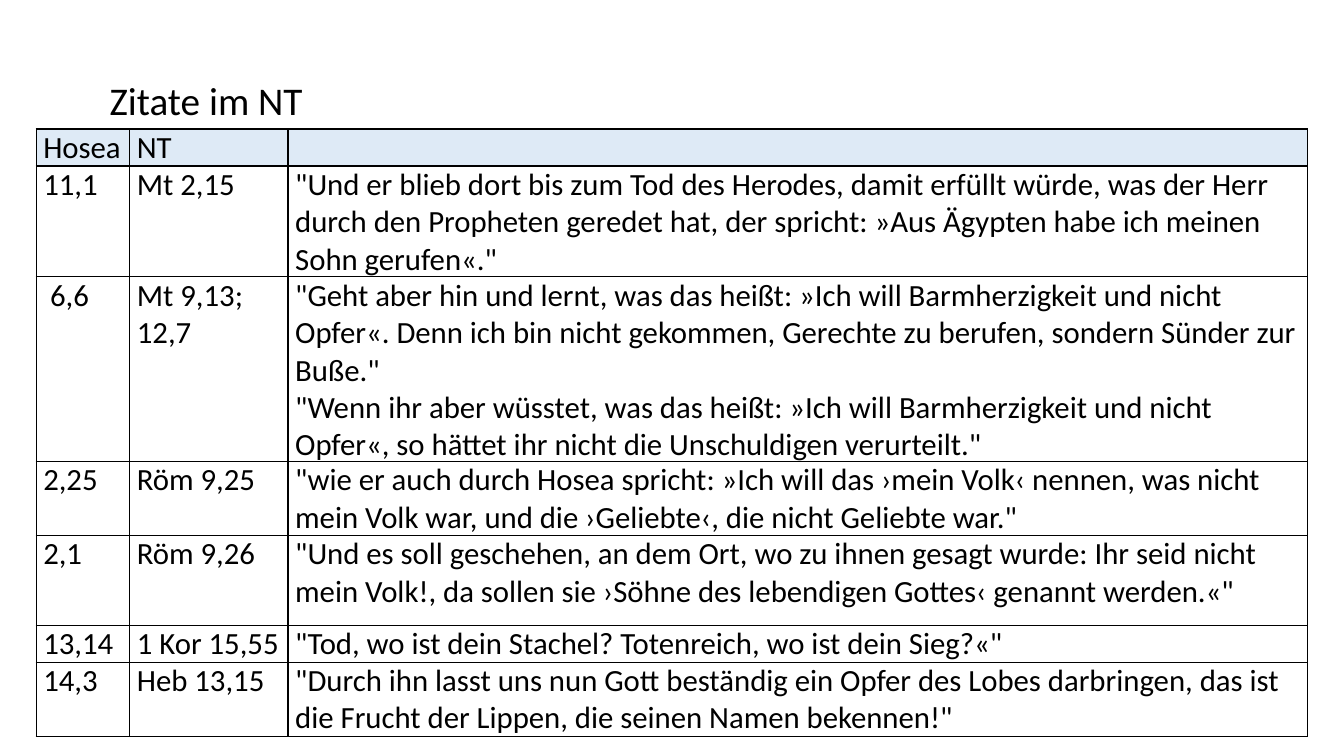
"""Build a slide with a table of the Hosea quotations in the New Testament."""
from pptx import Presentation
from pptx.dml.color import RGBColor
from pptx.enum.text import MSO_ANCHOR, MSO_AUTO_SIZE, PP_ALIGN
from pptx.oxml import parse_xml
from pptx.oxml.ns import nsdecls
from pptx.util import Cm, Pt

TITLE = "Zitate im NT"
ROWS = [
    ("Hosea", "NT", ""),
    ("11,1", "Mt 2,15",
     '"Und er blieb dort bis zum Tod des Herodes, damit erfüllt würde, was der Herr '
     'durch den Propheten geredet hat, der spricht: »Aus Ägypten habe ich meinen '
     'Sohn gerufen«."'),
    (" 6,6", "Mt 9,13; 12,7",
     '"Geht aber hin und lernt, was das heißt: »Ich will Barmherzigkeit und nicht '
     'Opfer«. Denn ich bin nicht gekommen, Gerechte zu berufen, sondern Sünder zur '
     'Buße."\n'
     '"Wenn ihr aber wüsstet, was das heißt: »Ich will Barmherzigkeit und nicht '
     'Opfer«, so hättet ihr nicht die Unschuldigen verurteilt."'),
    ("2,25", "Röm 9,25",
     '"wie er auch durch Hosea spricht: »Ich will das ›mein Volk‹ nennen, was nicht '
     'mein Volk war, und die ›Geliebte‹, die nicht Geliebte war."'),
    ("2,1", "Röm 9,26",
     '"Und es soll geschehen, an dem Ort, wo zu ihnen gesagt wurde: Ihr seid nicht '
     'mein Volk!, da sollen sie ›Söhne des lebendigen Gottes‹ genannt werden.«"'),
    ("13,14", "1 Kor 15,55",
     '"Tod, wo ist dein Stachel? Totenreich, wo ist dein Sieg?«"'),
    ("14,3", "Heb 13,15",
     '"Durch ihn lasst uns nun Gott beständig ein Opfer des Lobes darbringen, das ist '
     'die Frucht der Lippen, die seinen Namen bekennen!"'),
]
COL_WIDTHS = [2.36, 3.99, 25.68]
ROW_HEIGHTS = [0.76, 2.26, 3.76, 1.5, 2.26, 0.76, 1.5]
TABLE_LEFT, TABLE_TOP = 0.91, 3.25
TITLE_BOX = {"left": Cm(2.51), "top": Cm(1.8), "width": Cm(5.56), "height": Cm(1.45)}
TITLE_FRAME = {"word_wrap": False, "auto_size": MSO_AUTO_SIZE.SHAPE_TO_FIT_TEXT,
               "vertical_anchor": MSO_ANCHOR.TOP}
CELL = {"margin_left": Cm(0.18), "margin_right": Cm(0.18),
        "margin_top": 0, "margin_bottom": 0, "vertical_anchor": MSO_ANCHOR.TOP}
BLACK, WHITE, HEADER_FILL = "000000", "FFFFFF", "DEEAF6"


def paint(color_format, color):
    color_format.rgb = RGBColor.from_string(color)


def apply(target, values):
    for name, value in values.items():
        setattr(target, name, value)


def format_text(tf, size):
    for p in tf.paragraphs:
        p.alignment = PP_ALIGN.LEFT
        for r in p.runs:
            apply(r.font, {"name": "Calibri", "size": Pt(size)})
            paint(r.font.color, BLACK)


def add_borders(cell):
    tcPr = cell._tc.get_or_add_tcPr()
    for side in "LRTB":
        tcPr.append(parse_xml(
            f'<a:ln{side} {nsdecls("a")} w="{Pt(1)}"><a:solidFill>'
            f'<a:srgbClr val="{BLACK}"/></a:solidFill></a:ln{side}>'))


def add_title(s):
    title = s.shapes.title
    apply(title, TITLE_BOX)
    title.text_frame.text = TITLE
    apply(title.text_frame, TITLE_FRAME)
    format_text(title.text_frame, 28)


def add_quotes(s):
    frame = s.shapes.add_table(len(ROWS), len(COL_WIDTHS), Cm(TABLE_LEFT), Cm(TABLE_TOP),
                               Cm(sum(COL_WIDTHS)), Cm(sum(ROW_HEIGHTS)))
    table = frame.table
    apply(table, {"first_row": False, "horz_banding": False})
    for column, width in zip(table.columns, COL_WIDTHS):
        column.width = Cm(width)
    for i, (row, height, texts) in enumerate(zip(table.rows, ROW_HEIGHTS, ROWS)):
        row.height = Cm(height)
        for cell, text in zip(row.cells, texts):
            cell.text = text
            apply(cell, CELL)
            format_text(cell.text_frame, 22)
            add_borders(cell)
            cell.fill.solid()
            paint(cell.fill.fore_color, WHITE if i else HEADER_FILL)


def main():
    prs = Presentation()
    apply(prs, {"slide_width": Cm(33.87), "slide_height": Cm(19.05)})
    s = prs.slides.add_slide(prs.slide_layouts[5])
    add_title(s)
    add_quotes(s)
    prs.save("out.pptx")


if __name__ == "__main__":
    main()
